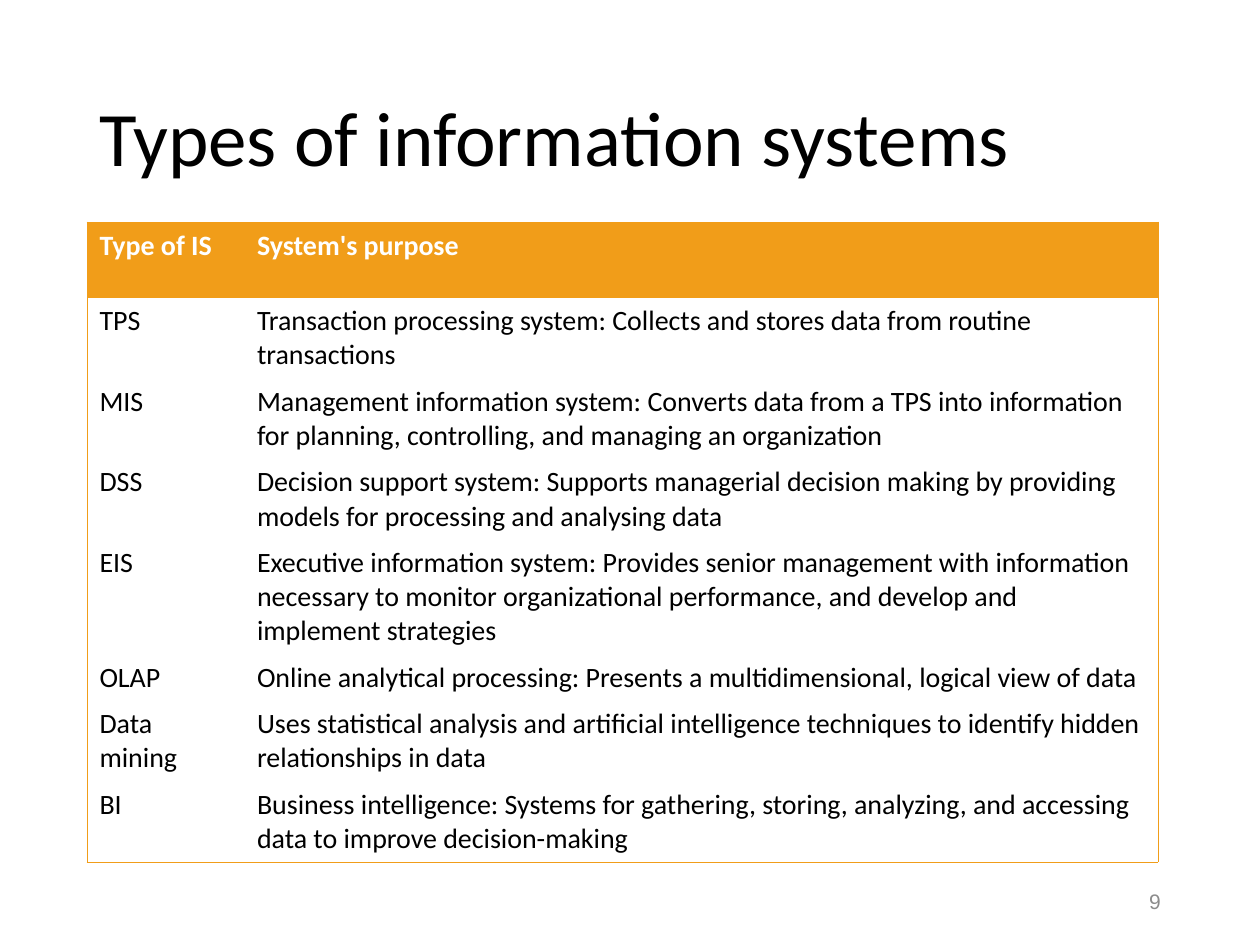
from pptx import Presentation, util as u
from pptx.dml.color import RGBColor
from pptx.enum import text
from pptx.oxml import parse_xml
from pptx.oxml.ns import nsdecls

COLOURS = {"accent": "F19D19", "paper": "FFFFFF", "ink": "000000", "muted": "8C8C8C"}
PLAIN_TABLE = "{2D5ABB26-0587-4C30-8999-92F81FD0307C}"
PURPOSES = [
    ("Type of IS", "System's purpose"),
    ("TPS", "Transaction processing system: Collects and stores data from routine transactions"),
    ("MIS", "Management information system: Converts data from a TPS into information "
            "for planning, controlling, and managing an organization"),
    ("DSS", "Decision support system: Supports managerial decision making by providing "
            "models for processing and analysing data"),
    ("EIS", "Executive information system: Provides senior management with information "
            "necessary to monitor organizational performance, and develop and implement strategies"),
    ("OLAP", "Online analytical processing: Presents a multidimensional, logical view of data"),
    ("Data mining", "Uses statistical analysis and artificial intelligence techniques "
                    "to identify hidden relationships in data"),
    ("BI", "Business intelligence: Systems for gathering, storing, analyzing, "
           "and accessing data to improve decision-making"),
]
LINES = [2, 2, 2, 3, 1, 2, 2]
HEADER_HEIGHT, LINE_HEIGHT, CELL_PADDING = 0.6, 0.27, 0.1


class Deck:
    """Holds the style and the current slide; places elements by shares of the slide's size."""

    def __init__(self, width, height):
        self.show = Presentation()
        self.show.slide_width, self.show.slide_height = u.Inches(width), u.Inches(height)
        self.slide = self.show.slides.add_slide(self.show.slide_layouts[6])

    def place(self, left, top, width, height):
        across, down = self.show.slide_width, self.show.slide_height
        return [round(share * side) for share, side in
                zip((left, top, width, height), (across, down, across, down))]

    def style(self, paragraph, size, colour, face="Calibri", bold=False):
        font = paragraph.font
        font.name, font.size, font.bold = face, u.Pt(size), bold
        font.color.rgb = RGBColor.from_string(COLOURS[colour])

    def label(self, words, area, size, colour, face="Calibri",
              align=text.PP_ALIGN.LEFT, spacing=1.0):
        frame = self.slide.shapes.add_textbox(*self.place(*area)).text_frame
        frame.word_wrap, frame.vertical_anchor = True, text.MSO_ANCHOR.MIDDLE
        paragraph = frame.paragraphs[0]
        paragraph.text, paragraph.alignment, paragraph.line_spacing = words, align, spacing
        self.style(paragraph, size, colour, face)

    def border(self, cell, sides):
        for side in sides:
            cell._tc.get_or_add_tcPr().append(parse_xml(
                f'<a:ln{side} {nsdecls("a")} w="{u.Pt(0.5)}"><a:solidFill>'
                f'<a:srgbClr val="{COLOURS["accent"]}"/></a:solidFill></a:ln{side}>'))

    def table(self, entries, area, widths, heights):
        grid = self.slide.shapes.add_table(len(entries), len(widths), *self.place(*area)).table
        grid._tbl.tblPr.find("{*}tableStyleId").text = PLAIN_TABLE
        grid.horz_banding = False
        for column, width in zip(grid.columns, widths):
            column.width = u.Inches(width)
        for row, height in zip(grid.rows, heights):
            row.height = u.Inches(height)
        for r, entry in enumerate(entries):
            edges = {"T": r == 0, "B": r == len(entries) - 1}
            for c, words in enumerate(entry):
                cell = grid.cell(r, c)
                cell.text = words
                self.style(cell.text_frame.paragraphs[0], 16,
                           "ink" if r else "paper", bold=r == 0)
                self.border(cell, ("R" if c else "L",
                                   *(side for side, outer in edges.items() if outer)))
                cell.fill.solid()
                cell.fill.fore_color.rgb = RGBColor.from_string(COLOURS["paper" if r else "accent"])


def main():
    deck = Deck(10, 7.5)
    deck.label("Types of information systems", (0.069, 0.053, 0.862, 0.193), 44, "ink", spacing=0.9)
    deck.label("9", (0.706, 0.927, 0.225, 0.053), 12, "muted", "Arial", text.PP_ALIGN.RIGHT)
    heights = [HEADER_HEIGHT] + [LINE_HEIGHT * lines + CELL_PADDING for lines in LINES]
    deck.table(PURPOSES, (0.069, 0.235, 0.85, 0.67), (1.25, 7.25), heights)
    deck.show.save("out.pptx")


if __name__ == "__main__":
    main()
